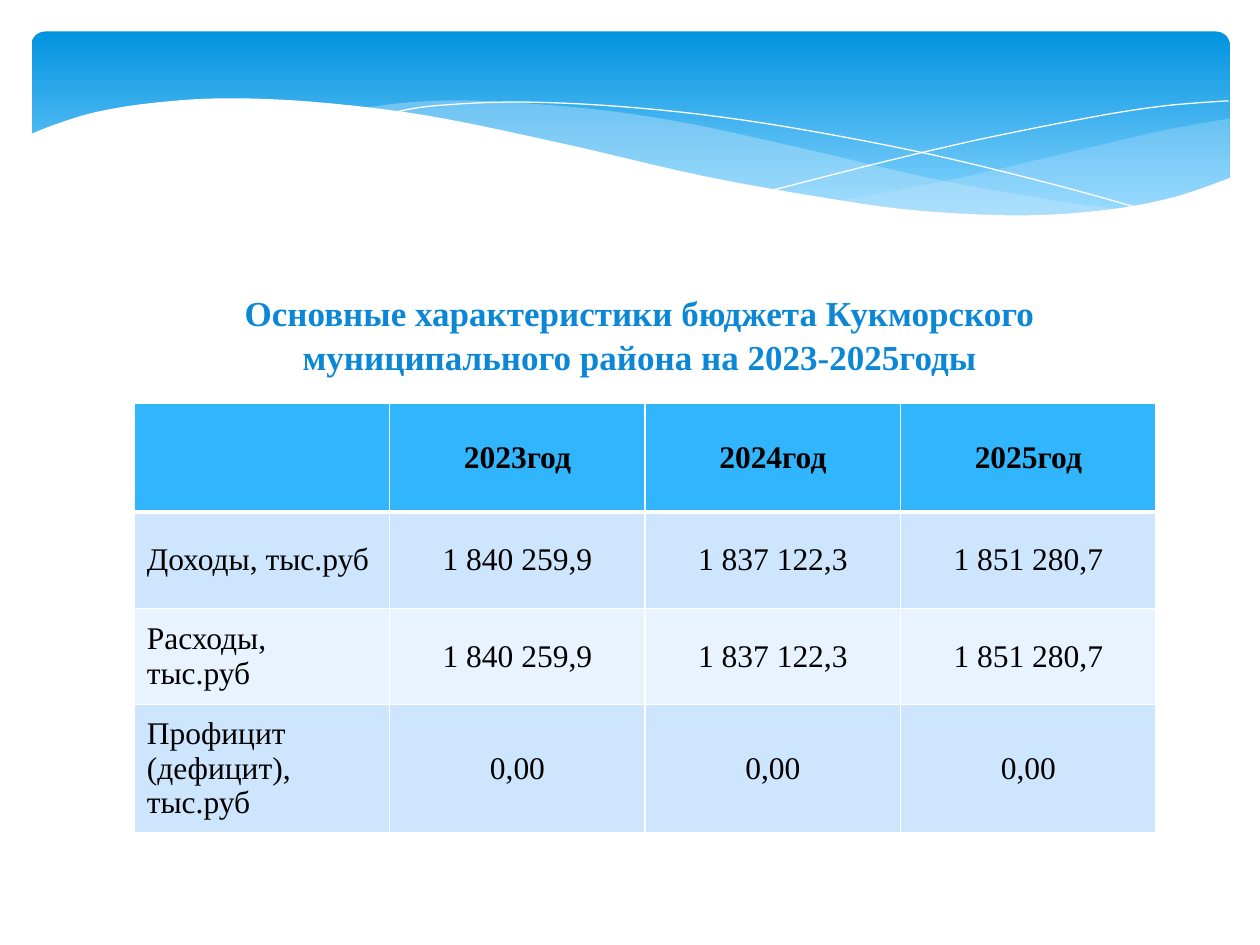
from lxml import etree
from pptx import Presentation
from pptx.dml.color import RGBColor
from pptx.enum import shapes, text
from pptx.oxml import ns
from pptx.util import Pt

FONT = "Times New Roman"
HEX = {
    "deep": "0293E0", "sky": "83D3FE", "mist": "C6E7FC", "white": "FFFFFF",
    "title": "0B87D6", "head": "31B6FD", "odd": "CEE5FE", "even": "E8F3FF",
    "ink": "000000",
}

# Wave edges in points, measured from the corner of the band
FRONT = [(-1.4, 59), (15.1, 52.6), (36.7, 46.1), (67.7, 41), (109.4, 38.2),
         (162, 40.3), (226.8, 48.2), (303.8, 64.1), (381.6, 82.1),
         (448.6, 94.3), (504.7, 102.2), (564.5, 105.1), (612, 102.2),
         (651.6, 95), (685.4, 83.5)]
BASE = [(685.4, 143.3), (-1.4, 143.3)]
RIGHT_TOP = [(457.9, 97.2), (524.2, 85), (601.9, 67), (645.1, 56.9),
             (684.7, 49.7)]
RIGHT_LOW = [(684.7, 83.5), (655.2, 94.3), (616.3, 102.2), (568.1, 105.8),
             (518.4, 103.7), (457.9, 97.2)]
MID_TOP = [(187.9, 43.9), (218.2, 40.3), (255.6, 39.6), (316.8, 43.9),
           (371.5, 51.8), (434.9, 65.5), (515.5, 84.2), (584.6, 96.5),
           (625, 102.2)]
MID_LOW = [(625, 102.2), (571, 106.6), (511.9, 103.7), (438.5, 94.3),
           (363.6, 79.2), (289.4, 61.2), (228.2, 49.7), (187.9, 43.9)]
LINES = [
    [(204.5, 46.8), (229.7, 42.5), (281.5, 40.3), (349.2, 43.9),
     (419.8, 52.6), (505.4, 68.4), (580.3, 86.4), (635, 101.5)],
    [(423.4, 90.7), (482.4, 75.6), (540.7, 61.9), (605.5, 49),
     (647.3, 42.5), (684, 39.6)],
]

TITLE = ("Основные характеристики бюджета Кукморского "
         "муниципального района на 2023-2025годы")
ROWS = [
    ["", "2023год", "2024год", "2025год"],
    ["Доходы, тыс.руб", "1 840 259,9", "1 837 122,3", "1 851 280,7"],
    ["Расходы, тыс.руб", "1 840 259,9", "1 837 122,3", "1 851 280,7"],
    ["Профицит (дефицит), тыс.руб", "0,00", "0,00", "0,00"],
]
HEIGHTS = [62, 55, 55, 73]


def rgb(name):
    return RGBColor.from_string(HEX[name])


def smooth(knots, steps=6):
    """Return points of a Catmull-Rom curve through the knots."""
    ends = [knots[0], *knots, knots[-1]]
    curve = [knots[0]]
    for a, b, c, d in zip(ends, ends[1:], ends[2:], ends[3:]):
        for step in range(1, steps + 1):
            t = step / steps
            curve.append(tuple(
                (2 * q + (r - p) * t + (2 * p - 5 * q + 4 * r - s) * t ** 2
                 + (3 * q - p - 3 * r + s) * t ** 3) / 2
                for p, q, r, s in zip(a, b, c, d)))
    return curve


def add_path(slide, box, points, close):
    left, top = box[:2]
    spots = [(Pt(left + x), Pt(top + y)) for x, y in points]
    pen = slide.shapes.build_freeform(*spots[0])
    pen.add_line_segments(spots[1:], close=close)
    path = pen.convert_to_shape()
    path.shadow.inherit = False
    return path


def add_wave(slide, box, points, color, alpha=100):
    wave = add_path(slide, box, points, True)
    wave.fill.solid()
    wave.fill.fore_color.rgb = rgb(color)
    wave.line.fill.background()
    if alpha < 100:
        tint = wave.fill._xPr.find(".//" + ns.qn("a:srgbClr"))
        etree.SubElement(tint, ns.qn("a:alpha"), val=str(alpha * 1000))


def add_banner(slide, box):
    band = slide.shapes.add_shape(
        shapes.MSO_SHAPE.ROUNDED_RECTANGLE, *map(Pt, box))
    band.adjustments[0] = 0.07
    band.shadow.inherit = False
    band.line.fill.background()
    band.fill.gradient()
    band.fill.gradient_angle = 270
    for stop, color, place in zip(
            band.fill.gradient_stops, ("deep", "sky"), (0, 0.9)):
        stop.color.rgb = rgb(color)
        stop.position = place

    add_wave(slide, box, smooth(RIGHT_TOP) + smooth(RIGHT_LOW), "mist", 29)
    add_wave(slide, box, smooth(MID_TOP) + smooth(MID_LOW), "mist", 40)
    for knots in LINES:
        curve = add_path(slide, box, smooth(knots), False)
        curve.fill.background()
        curve.line.color.rgb = rgb("white")
        curve.line.width = Pt(0)
    add_wave(slide, box, smooth(FRONT) + BASE, "white")


def set_font(para, size, color, bold):
    font = para.font
    font.name, font.size, font.bold = FONT, Pt(size), bold
    font.color.rgb = rgb(color)


def add_title(slide, box):
    title = slide.shapes.title
    title.left, title.top, title.width, title.height = map(Pt, box)
    frame = title.text_frame
    frame.text = TITLE
    frame.word_wrap = True
    frame.auto_size = text.MSO_AUTO_SIZE.NONE
    frame.vertical_anchor = text.MSO_ANCHOR.MIDDLE
    para = frame.paragraphs[0]
    para.alignment = text.PP_ALIGN.CENTER
    para.line_spacing = 1.05
    set_font(para, 20, "title", True)


def set_edge(cell, side, width):
    props = cell._tc.get_or_add_tcPr()
    edge = etree.Element(ns.qn("a:ln" + side), w=str(Pt(width)))
    fill = etree.SubElement(edge, ns.qn("a:solidFill"))
    etree.SubElement(fill, ns.qn("a:srgbClr"), val=HEX["white"])
    props.insert("LRTB".index(side), edge)


def add_budget(slide, box):
    table = slide.shapes.add_table(
        len(ROWS), len(ROWS[0]), *map(Pt, box)).table
    for col in table.columns:
        col.width = Pt(box[2] / len(ROWS[0]))
    for i, row in enumerate(ROWS):
        table.rows[i].height = Pt(HEIGHTS[i])
        shade = "head" if i == 0 else "odd" if i % 2 else "even"
        for j, words in enumerate(row):
            cell = table.cell(i, j)
            cell.text = words
            cell.vertical_anchor = text.MSO_ANCHOR.MIDDLE
            cell.fill.solid()
            cell.fill.fore_color.rgb = rgb(shade)
            para = cell.text_frame.paragraphs[0]
            para.alignment = (text.PP_ALIGN.CENTER if j
                              else text.PP_ALIGN.LEFT)
            set_font(para, 18, "ink", i == 0)
            for side in "LRTB":
                thick = (i, side) in ((0, "B"), (1, "T"))
                set_edge(cell, side, 3 if thick else 1)


def main():
    deck = Presentation()
    deck.slide_width, deck.slide_height = Pt(720), Pt(540)
    slide = deck.slides.add_slide(deck.slide_layouts[5])
    add_banner(slide, (18, 18, 684.7, 112.3))
    add_budget(slide, (76.7, 230.6, 584, sum(HEIGHTS)))
    add_title(slide, (70.5, 139.7, 590, 101.5))
    deck.save("out.pptx")


if __name__ == "__main__":
    main()
